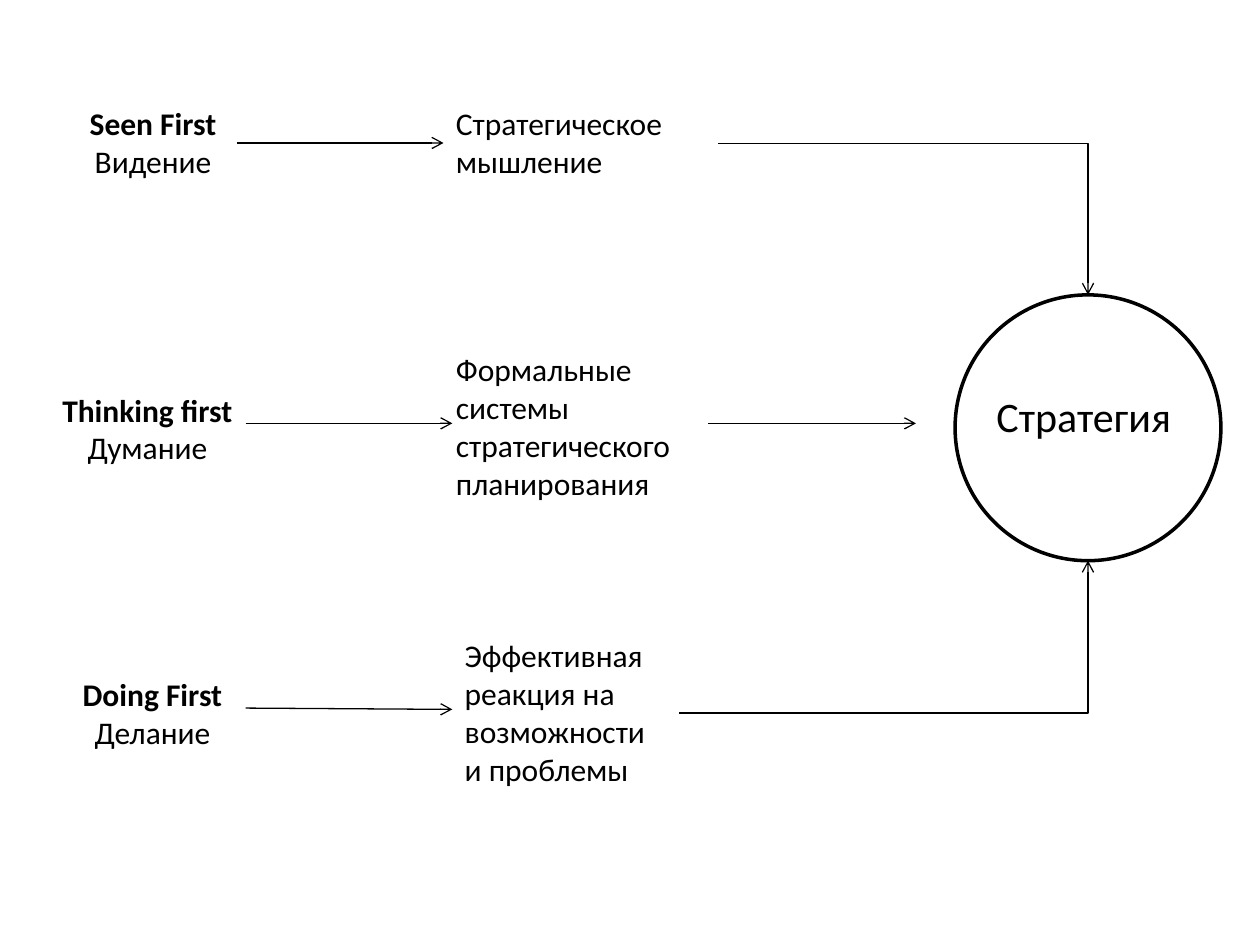
from lxml import etree
from pptx import Presentation
from pptx.dml.color import RGBColor
from pptx.enum.shapes import MSO_CONNECTOR, MSO_SHAPE
from pptx.enum.text import MSO_AUTO_SIZE, PP_ALIGN
from pptx.oxml.ns import qn
from pptx.util import Inches, Pt

STRAIGHT, ELBOW = MSO_CONNECTOR.STRAIGHT, MSO_CONNECTOR.ELBOW
OVAL = MSO_SHAPE.OVAL
LEFT, CENTER = PP_ALIGN.LEFT, PP_ALIGN.CENTER
GROW = MSO_AUTO_SIZE.SHAPE_TO_FIT_TEXT
BLACK = "000000"
TOP_SIDE, LEFT_SIDE, RIGHT_SIDE = 0, 1, 3

APPROACHES = [
    {"label": ("Seen First", "Видение"), "label_box": (0.55, 0.78, 1.33, 0.71),
     "outcome": "Стратегическое мышление", "outcome_box": (3.52, 0.78, 2.19, 0.71),
     "arrow": (1.88, 1.14, 3.52, 1.14), "joined": True},
    {"label": ("Thinking first", "Думание"), "label_box": (0.31, 3.05, 1.72, 0.71),
     "outcome": "Формальные системы стратегического планирования",
     "outcome_box": (3.52, 2.73, 2.5, 1.31), "arrow": (1.95, 3.36, 3.59, 3.36)},
    {"label": ("Doing First", "Делание"), "label_box": (0.47, 5.31, 1.48, 0.71),
     "outcome": "Эффективная реакция на возможности и проблемы",
     "outcome_box": (3.59, 5, 1.8, 1.31), "arrow": (1.95, 5.62, 3.59, 5.63)},
]
STRATEGY_BOX = (7.58, 2.34, 2.11, 2.11)


def color(hex_value):
    return RGBColor.from_string(hex_value)


def add_text(slide, box, lines, size=18, align=LEFT, bold_first=False):
    text_box = slide.shapes.add_textbox(*map(Inches, box))
    frame = text_box.text_frame
    frame.word_wrap = True
    frame.auto_size = GROW
    for index, line in enumerate(lines):
        paragraph = frame.paragraphs[0] if index == 0 else frame.add_paragraph()
        paragraph.alignment = align
        run = paragraph.add_run()
        run.text = line
        run.font.name = "Calibri"
        run.font.size = Pt(size)
        run.font.bold = bold_first and index == 0
        run.font.color.rgb = color(BLACK)
    return text_box


def add_arrow(slide, ends, kind=STRAIGHT):
    arrow = slide.shapes.add_connector(kind, *map(Inches, ends))
    arrow.line.color.rgb = color(BLACK)
    arrow.line.width = Pt(0.75)
    properties = arrow.element.spPr
    if kind == ELBOW:
        properties.find(qn("a:prstGeom")).set("prst", "bentConnector2")
    etree.SubElement(properties.find(qn("a:ln")), qn("a:tailEnd"), type="arrow")
    etree.SubElement(properties, qn("a:effectLst"))
    return arrow


def add_approach(slide, label, label_box, outcome, outcome_box, arrow, joined=False):
    label_text = add_text(slide, label_box, label, align=CENTER, bold_first=True)
    outcome_text = add_text(slide, outcome_box, [outcome])
    connector = add_arrow(slide, arrow)
    if joined:
        connector.begin_connect(label_text, RIGHT_SIDE)
        connector.end_connect(outcome_text, LEFT_SIDE)


def add_strategy(slide, box):
    left, top, width, height = box
    circle = slide.shapes.add_shape(OVAL, *map(Inches, box))
    circle.shadow.inherit = False
    circle.fill.background()
    circle.line.color.rgb = color(BLACK)
    circle.line.width = Pt(2)
    center = left + width / 2
    add_arrow(slide, (5.7, 1.14, center, top), ELBOW)
    add_arrow(slide, (5.39, 5.66, center, top + height), ELBOW)
    add_arrow(slide, (5.62, 3.36, 7.27, 3.36))
    add_text(slide, (left + 0.23, top + 0.71, 1.8, 0.51), ["Стратегия"], size=24)


def main():
    presentation = Presentation()
    presentation.slide_width = Inches(10)
    presentation.slide_height = Inches(7.5)
    slide = presentation.slides.add_slide(presentation.slide_layouts[6])
    for approach in APPROACHES:
        add_approach(slide, **approach)
    add_strategy(slide, STRATEGY_BOX)
    presentation.save("out.pptx")


if __name__ == "__main__":
    main()
